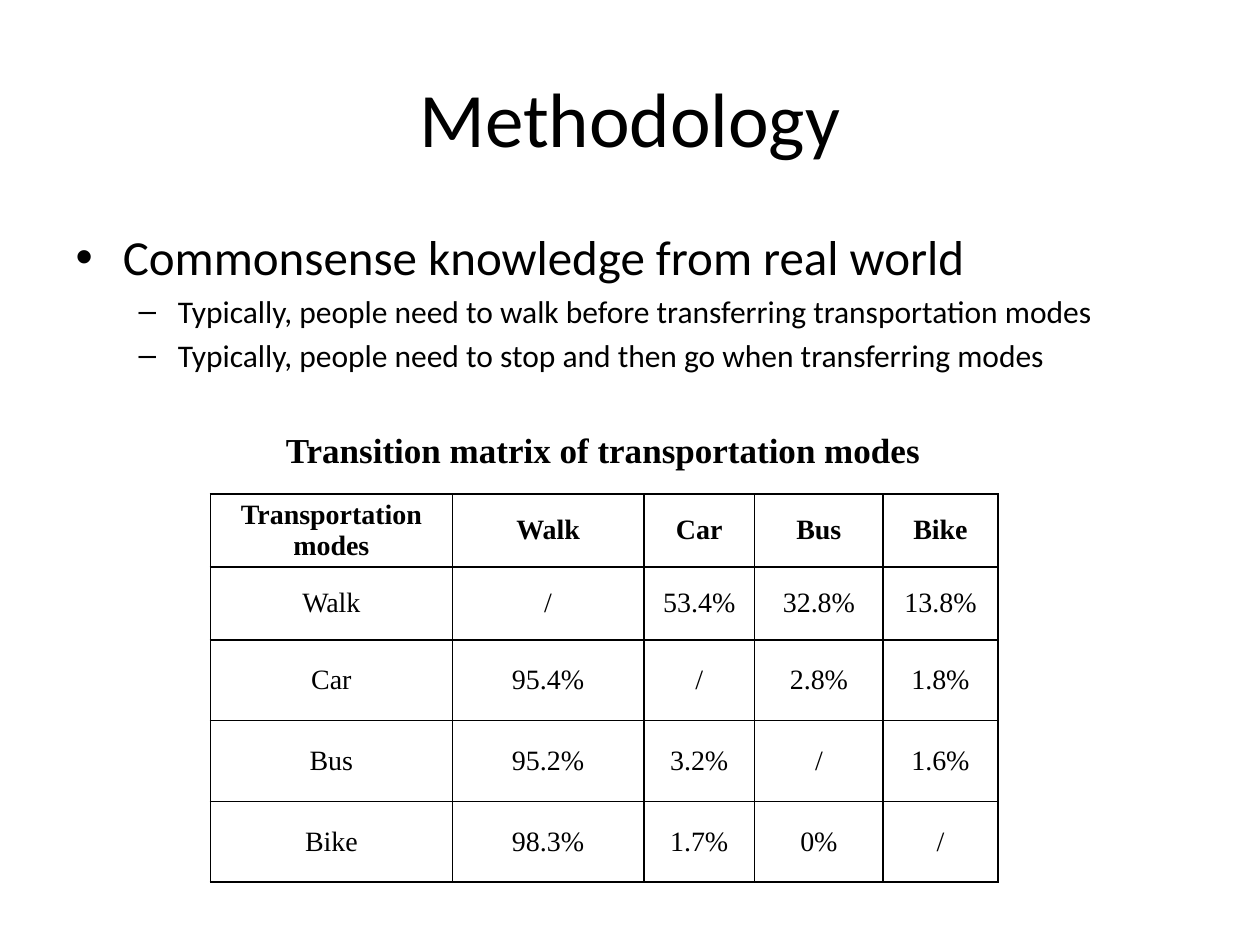
from lxml.etree import SubElement as Sub
from pptx import Presentation
from pptx.dml.color import RGBColor
from pptx.enum.text import MSO_ANCHOR as Anchor, MSO_AUTO_SIZE as Fit, PP_ALIGN as Align
from pptx.oxml.ns import qn
from pptx.util import Inches, Pt

BLACK = RGBColor(0, 0, 0)
SANS, SERIF = "Calibri", "Times New Roman"
POINTS = [
    ("Commonsense knowledge from real world", 0, 28),
    ("Typically, people need to walk before transferring transportation modes", 1, 18),
    ("Typically, people need to stop and then go when transferring modes", 1, 18),
]
COLS = [1.92, 1.52, 0.88, 1.02, 0.91]
ROWS = [0.58, 0.58, 0.64, 0.64, 0.64]
MATRIX = [
    ["Transportation modes", "Walk", "Car", "Bus", "Bike"],
    ["Walk", "/", "53.4%", "32.8%", "13.8%"],
    ["Car", "95.4%", "/", "2.8%", "1.8%"],
    ["Bus", "95.2%", "3.2%", "/", "1.6%"],
    ["Bike", "98.3%", "1.7%", "0%", "/"],
]


def write(para, text, size, font=SANS, bold=False, align=Align.LEFT, level=0):
    """Put formatted text into a paragraph."""
    para.level, para.alignment = level, align
    run = para.add_run()
    run.text = text
    run.font.size, run.font.name, run.font.bold = Pt(size), font, bold
    run.font.color.rgb = BLACK


def place(shape, left, top, width, height):
    """Move and size a shape in inches."""
    shape.left, shape.top = Inches(left), Inches(top)
    shape.width, shape.height = Inches(width), Inches(height)


def add_title(slide, text):
    """Fill the title placeholder."""
    title = slide.shapes.title
    place(title, 0.5, 0.3, 9, 1.25)
    title.text_frame.vertical_anchor = Anchor.MIDDLE
    write(title.text_frame.paragraphs[0], text, 44, align=Align.CENTER)


def add_list(slide, points):
    """Fill the body placeholder with bullets."""
    body = slide.placeholders[1]
    place(body, 0.5, 1.75, 9, 4.95)
    frame = body.text_frame
    frame.auto_size = Fit.NONE
    for i, (text, level, size) in enumerate(points):
        para = frame.add_paragraph() if i else frame.paragraphs[0]
        write(para, text, size, level=level)
    frame.paragraphs[0].space_before = Pt(0)


def add_label(slide, text):
    """Add the heading above the matrix."""
    box = slide.shapes.add_textbox(Inches(2.17), Inches(3.33), Inches(5.42), Inches(0.71))
    frame = box.text_frame
    frame.word_wrap = True
    frame.margin_top = Inches(0.07)
    write(frame.paragraphs[0], text, 20, SERIF, bold=True)


def add_edges(cell):
    """Draw thin black borders round a cell."""
    props = cell._tc.get_or_add_tcPr()
    for side in ("a:lnL", "a:lnR", "a:lnT", "a:lnB"):
        line = Sub(props, qn(side), w=str(Pt(1)))
        fill = Sub(line, qn("a:solidFill"))
        Sub(fill, qn("a:srgbClr"), val=str(BLACK))


def add_matrix(slide, rows):
    """Add the transition table."""
    shape = slide.shapes.add_table(
        len(ROWS), len(COLS), Inches(1.67), Inches(3.92), Inches(sum(COLS)), Inches(sum(ROWS)))
    table = shape.table
    table.first_row = table.horz_banding = False
    for col, width in zip(table.columns, COLS):
        col.width = Inches(width)
    for row, height in zip(table.rows, ROWS):
        row.height = Inches(height)
    for r, row in enumerate(rows):
        for c, text in enumerate(row):
            cell = table.cell(r, c)
            cell.margin_left = cell.margin_right = Inches(0.07)
            cell.margin_top = cell.margin_bottom = 0
            cell.vertical_anchor = Anchor.MIDDLE
            add_edges(cell)
            cell.fill.background()
            write(cell.text_frame.paragraphs[0], text, 16, SERIF, bold=r == 0, align=Align.CENTER)


def main():
    """Build and save the slide."""
    deck = Presentation()
    deck.slide_width, deck.slide_height = Inches(10), Inches(7.5)
    slide = deck.slides.add_slide(deck.slide_layouts[1])
    add_title(slide, "Methodology")
    add_list(slide, POINTS)
    add_matrix(slide, MATRIX)
    add_label(slide, "Transition matrix of transportation modes")
    deck.save("out.pptx")


if __name__ == "__main__":
    main()
